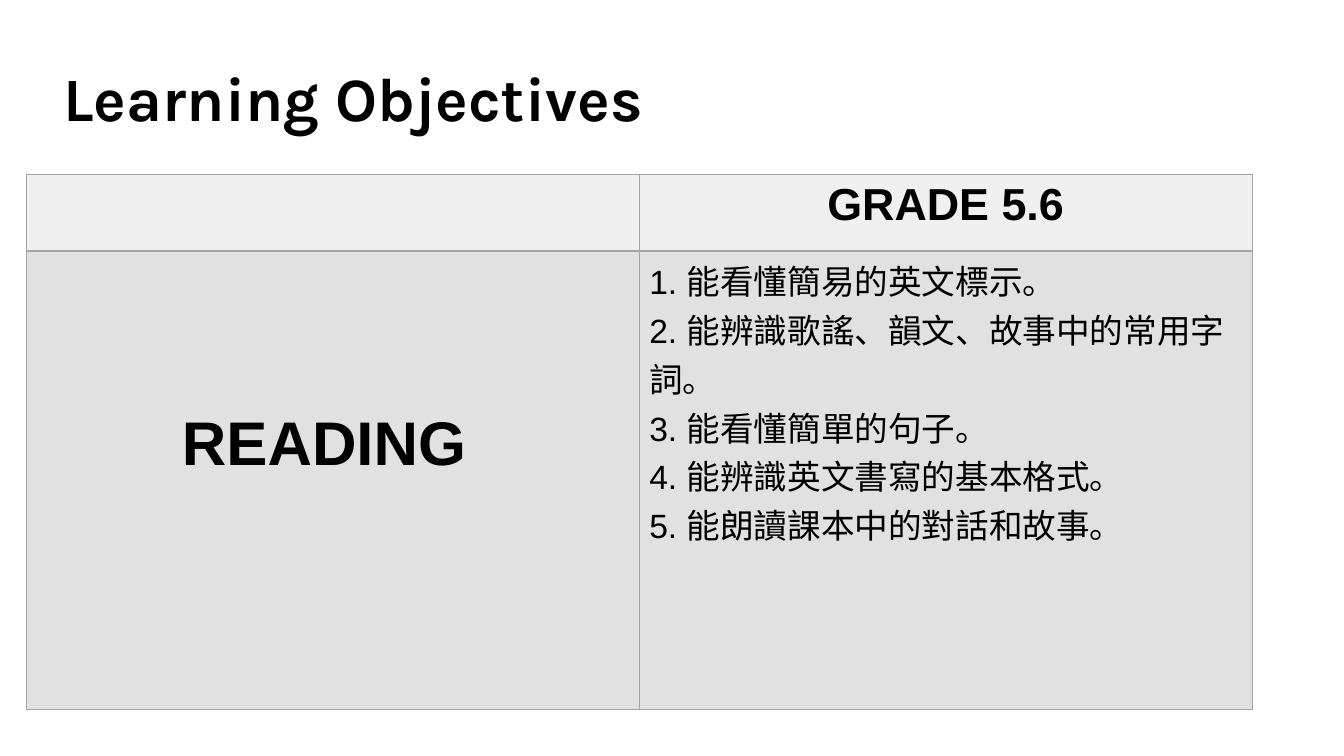
"""Build the Learning Objectives slide with its reading table."""
from dataclasses import dataclass

import lxml.etree
import pptx
import pptx.dml.color
import pptx.enum.text
import pptx.oxml.ns
import pptx.util

ALIGN = pptx.enum.text.PP_ALIGN
ANCHOR = pptx.enum.text.MSO_ANCHOR


@dataclass(frozen=True)
class Theme:
    ink: str = "000000"
    header: str = "F0F0F0"
    body: str = "E1E1E1"
    border: str = "A5A5A5"
    heading_font: str = "Karla"
    text_font: str = "Arial"
    display: int = 44
    heading: int = 32
    text: int = 24
    line: float = 1


@dataclass(frozen=True)
class Cell:
    row: int
    col: int
    fill: str
    lines: tuple[str, ...] = ()
    size: int = 24
    bold: bool = True
    align: ALIGN = ALIGN.CENTER
    top: float = 0.05


THEME = Theme()
WIDTH, HEIGHT = 13.33, 7.5
COLS = (6.08, 6.08)
ROWS = (0.76, 4.55)
OBJECTIVES = (
    "能看懂簡易的英文標示。",
    "能辨識歌謠、韻文、故事中的常用字詞。",
    "能看懂簡單的句子。",
    "能辨識英文書寫的基本格式。",
    "能朗讀課本中的對話和故事。",
)
CELLS = (
    Cell(0, 0, THEME.header),
    Cell(0, 1, THEME.header, ("GRADE 5.6",), THEME.heading),
    Cell(1, 0, THEME.body, ("READING ",), THEME.display, top=1.58),
    Cell(1, 1, THEME.body,
         tuple(f"{n}. {line}" for n, line in enumerate(OBJECTIVES, 1)),
         THEME.text, False, ALIGN.LEFT),
)


def inches(*values: float) -> list[pptx.util.Length]:
    return [pptx.util.Inches(v) for v in values]


def rgb(value: str) -> pptx.dml.color.RGBColor:
    return pptx.dml.color.RGBColor.from_string(value)


def style(p, name: str, size: int, bold: bool, align: ALIGN) -> None:
    p.alignment = align
    p.font.name = name
    p.font.size = pptx.util.Pt(size)
    p.font.bold = bold
    p.font.color.rgb = rgb(THEME.ink)


def add_borders(cell) -> None:
    qn = pptx.oxml.ns.qn
    tc_pr = cell._tc.get_or_add_tcPr()
    for side in ("lnL", "lnR", "lnT", "lnB"):
        ln = lxml.etree.SubElement(tc_pr, qn(f"a:{side}"), w=str(pptx.util.Pt(THEME.line)))
        fill = lxml.etree.SubElement(ln, qn("a:solidFill"))
        lxml.etree.SubElement(fill, qn("a:srgbClr"), val=THEME.border)


def draw_cell(table, item: Cell) -> None:
    cell = table.cell(item.row, item.col)
    add_borders(cell)
    cell.fill.solid()
    cell.fill.fore_color.rgb = rgb(item.fill)
    cell.vertical_anchor = ANCHOR.TOP
    cell.margin_top = pptx.util.Inches(item.top)
    cell.text_frame.text = "\n".join(item.lines)
    for p in cell.text_frame.paragraphs:
        style(p, THEME.text_font, item.size, item.bold, item.align)


def draw_table(slide) -> None:
    frame = slide.shapes.add_table(len(ROWS), len(COLS),
                                   *inches(0.26, 1.73, sum(COLS), sum(ROWS)))
    table = frame.table
    table.first_row = table.horz_banding = False
    for column, width in zip(table.columns, inches(*COLS)):
        column.width = width
    for row, height in zip(table.rows, inches(*ROWS)):
        row.height = height
    for item in CELLS:
        draw_cell(table, item)


def draw_title(slide) -> None:
    sp = slide.shapes.title
    sp.left, sp.top, sp.width, sp.height = inches(0.4, 0.28, 11.5, 1.45)
    tf = sp.text_frame
    tf.text = "Learning Objectives"
    tf.auto_size = pptx.enum.text.MSO_AUTO_SIZE.NONE
    tf.vertical_anchor = ANCHOR.MIDDLE
    tf.margin_left = pptx.util.Inches(0.23)
    p = tf.paragraphs[0]
    p.line_spacing = 0.9
    style(p, THEME.heading_font, THEME.display, True, ALIGN.LEFT)


def main() -> None:
    prs = pptx.Presentation()
    prs.slide_width, prs.slide_height = inches(WIDTH, HEIGHT)
    slide = prs.slides.add_slide(prs.slide_layouts.get_by_name("Title Only"))
    draw_title(slide)
    draw_table(slide)
    prs.save("out.pptx")


if __name__ == "__main__":
    main()
